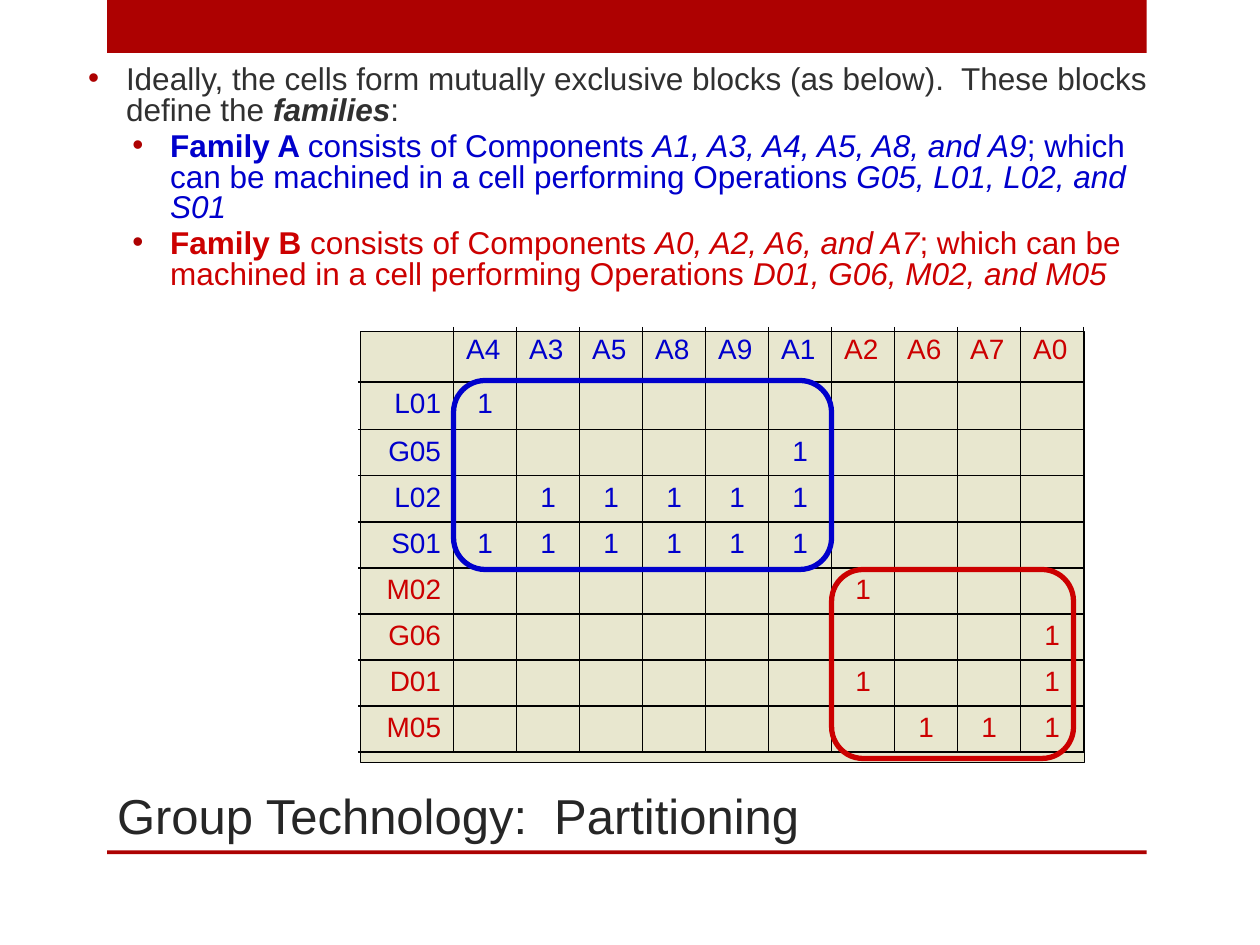
from dataclasses import dataclass

from lxml.etree import SubElement
from pptx import Presentation
from pptx.dml.color import RGBColor
from pptx.enum.shapes import MSO_SHAPE
from pptx.enum.text import MSO_ANCHOR, MSO_AUTO_SIZE, PP_ALIGN
from pptx.oxml import parse_xml
from pptx.oxml.ns import nsdecls, qn
from pptx.util import Inches, Pt


@dataclass(frozen=True)
class Theme:
    font: str = "Arial"
    accent: str = "AD0101"
    panel: str = "E8E7CF"
    line: str = "000000"
    title: str = "262626"
    body: str = "303030"
    family_a: str = "0000CC"
    family_b: str = "CC0000"
    title_size: int = 28
    body_size: int = 18
    table_size: int = 16


GRID_COLUMNS, GRID_ROWS = 100, 75


def add_text(paragraph, text, *, font, size, color, bold=False, italic=False):
    run = paragraph.add_run()
    run.text = text
    run.font.name = font
    run.font.size = Pt(size)
    run.font.bold = bold
    run.font.italic = italic
    run.font.color.rgb = RGBColor.from_string(color)


class SlideBuilder:
    """Places elements on a slide grid of 100 columns by 75 rows."""

    def __init__(self, presentation, theme):
        self.theme = theme
        self.slide = presentation.slides.add_slide(presentation.slide_layouts[1])
        self.column = presentation.slide_width / GRID_COLUMNS
        self.row = presentation.slide_height / GRID_ROWS

    def box(self, left, top, width, height):
        return (round(left * self.column), round(top * self.row),
                round(width * self.column), round(height * self.row))

    def move(self, placeholder, area, anchor):
        (placeholder.left, placeholder.top,
         placeholder.width, placeholder.height) = self.box(*area)
        frame = placeholder.text_frame
        frame.word_wrap = True
        frame.auto_size = MSO_AUTO_SIZE.NONE
        frame.vertical_anchor = anchor
        return frame

    def shape(self, area, kind=MSO_SHAPE.RECTANGLE, fill=None, line=None, weight=1):
        shape = self.slide.shapes.add_shape(kind, *self.box(*area))
        shape.shadow.inherit = False
        if fill:
            shape.fill.solid()
            shape.fill.fore_color.rgb = RGBColor.from_string(fill)
        else:
            shape.fill.background()
        if line:
            shape.line.color.rgb = RGBColor.from_string(line)
            shape.line.width = Pt(weight)
        else:
            shape.line.fill.background()

    def title(self, area, text):
        frame = self.move(self.slide.shapes.title, area, MSO_ANCHOR.BOTTOM)
        paragraph = frame.paragraphs[0]
        paragraph.alignment = PP_ALIGN.LEFT
        add_text(paragraph, text, font=self.theme.font,
                 size=self.theme.title_size, color=self.theme.title)

    def bullets(self, area, items):
        """Each item is a level, a colour and a list of (text, style) parts."""
        frame = self.move(self.slide.placeholders[1], area, MSO_ANCHOR.MIDDLE)
        for index, (level, color, parts) in enumerate(items):
            paragraph = frame.add_paragraph() if index else frame.paragraphs[0]
            paragraph.level = level
            paragraph.line_spacing = 0.8
            paragraph.space_before = Pt(0.2 * self.theme.body_size)
            properties = paragraph._p.get_or_add_pPr()
            properties.set("marL", str(Inches(0.3 + 0.35 * level)))
            properties.set("indent", str(Inches(-0.3)))
            bullet_color = SubElement(properties, qn("a:buClr"))
            SubElement(bullet_color, qn("a:srgbClr"), val=self.theme.accent)
            SubElement(properties, qn("a:buFont"), typeface=self.theme.font)
            SubElement(properties, qn("a:buChar"), char="•")
            for text, style in parts:
                add_text(paragraph, text, font=self.theme.font,
                         size=self.theme.body_size, color=color,
                         bold="b" in style, italic="i" in style)

    def border(self, cell, sides):
        properties = cell._tc.get_or_add_tcPr()
        for index, side in enumerate(sides):
            properties.insert(index, parse_xml(
                f'<a:ln{side} {nsdecls("a")} w="{Pt(1)}"><a:solidFill>'
                f'<a:srgbClr val="{self.theme.line}"/></a:solidFill></a:ln{side}>'))

    def matrix(self, area, components, operations, widths, heights):
        """Components and operations map each name to its colour or marks."""
        names = list(components)
        table = self.slide.shapes.add_table(
            len(operations) + 1, len(names) + 1, *self.box(*area)).table
        table.first_row = table.horz_banding = False
        for column, width in zip(table.columns, widths):
            column.width = round(width * self.column)
        for row, height in zip(table.rows, heights):
            row.height = round(height * self.row)

        # Header row, then one row of marks for each operation
        rows = [[("", "")] + list(components.items())]
        for name, (color, marks) in operations.items():
            rows.append([(name, color)] + [
                ("1" if component in marks else "", color) for component in names])

        for row_index, row in enumerate(rows):
            for column_index, (text, color) in enumerate(row):
                cell = table.cell(row_index, column_index)
                cell.fill.background()
                sides = ["L"] * (column_index > 0) + ["R"] + ["T"] * (row_index > 0) + ["B"]
                self.border(cell, sides)
                if not text:
                    cell.margin_top = cell.margin_bottom = 0
                    continue
                paragraph = cell.text_frame.paragraphs[0]
                if row_index:
                    paragraph.alignment = PP_ALIGN.CENTER if column_index else PP_ALIGN.RIGHT
                add_text(paragraph, text, font=self.theme.font,
                         size=self.theme.table_size, color=color)


def main():
    presentation = Presentation()
    presentation.slide_width, presentation.slide_height = Inches(10), Inches(7.5)
    theme = Theme()
    builder = SlideBuilder(presentation, theme)
    blue, red = theme.family_a, theme.family_b

    # Top band, title rule and table panel
    builder.shape((8.5, 0, 82.5, 4.2), fill=theme.accent)
    builder.shape((8.5, 67.5, 82.5, 0.3), fill=theme.accent)
    builder.shape((28.6, 26.3, 57.5, 34.2), fill=theme.panel, line=theme.line, weight=0.75)

    # Title and explanation
    builder.title((8.3, 60.4, 82.4, 7.1), "Group Technology:  Partitioning")
    link = "; which can be machined in a cell performing Operations "
    builder.bullets((6, 4.4, 86.7, 19.6), [
        (0, theme.body, [
            ("Ideally, the cells form mutually exclusive blocks (as below).  "
             "These blocks define the ", ""), ("families", "bi"), (":", "")]),
        *((1, color, [(f"Family {family} ", "b"), ("consists of Components ", ""),
                      (members, "i"), (link, ""), (operations, "i")])
          for family, color, members, operations in [
              ("A", blue, "A1, A3, A4, A5, A8, and A9", "G05, L01, L02, and S01"),
              ("B", red, "A0, A2, A6, and A7", "D01, G06, M02, and M05")]),
    ])

    # Component and operation matrix
    family_a = ["A4", "A3", "A5", "A8", "A9", "A1"]
    family_b = ["A2", "A6", "A7", "A0"]
    components = {**dict.fromkeys(family_a, blue), **dict.fromkeys(family_b, red)}
    operations = {
        "L01": (blue, ["A4"]),
        "G05": (blue, ["A1"]),
        "L02": (blue, family_a[1:]),
        "S01": (blue, family_a),
        "M02": (red, ["A2"]),
        "G06": (red, ["A0"]),
        "D01": (red, ["A2", "A0"]),
        "M05": (red, family_b[1:]),
    }
    builder.matrix((28.5, 26, 57.5, 33.7), components, operations,
                   widths=[7.5] + [5] * 10, heights=[4.3, 3.8] + [3.66] * 7)

    # Frames around the two families
    for area, color in [((36, 30.2, 30, 15), blue), ((66, 45.2, 19.2, 15), red)]:
        builder.shape(area, MSO_SHAPE.ROUNDED_RECTANGLE, line=color, weight=3)

    presentation.save("out.pptx")


if __name__ == "__main__":
    main()
